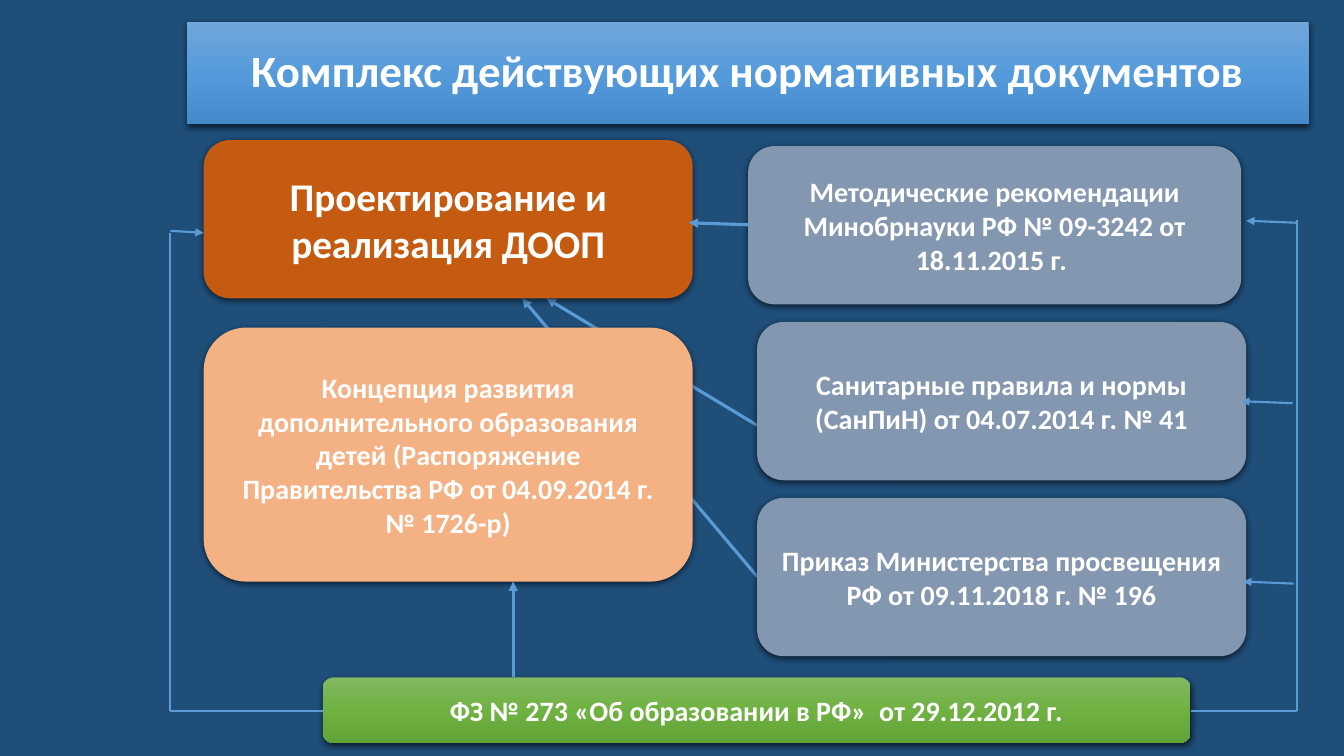
from collections import namedtuple

from lxml import etree
from pptx import Presentation
from pptx.dml.color import RGBColor
from pptx.enum.shapes import MSO_CONNECTOR, MSO_SHAPE
from pptx.enum.text import MSO_ANCHOR, MSO_AUTO_SIZE, PP_ALIGN
from pptx.oxml.ns import qn
from pptx.util import Inches, Pt

NAVY = RGBColor(0x1F, 0x4E, 0x79)
WHITE = RGBColor(0xFF, 0xFF, 0xFF)
BLACK = RGBColor(0x00, 0x00, 0x00)
LINE_BLUE = RGBColor(0x5B, 0x9B, 0xD5)
RUST = RGBColor(0xC5, 0x5A, 0x11)
PEACH = RGBColor(0xF4, 0xB1, 0x83)
SLATE = RGBColor(0x84, 0x97, 0xB0)
BLUE_GRADIENT = [RGBColor(0x71, 0xA6, 0xDB), RGBColor(0x55, 0x9B, 0xDB),
                 RGBColor(0x44, 0x8A, 0xCA)]
GREEN_GRADIENT = [RGBColor(0x81, 0xB8, 0x61), RGBColor(0x6F, 0xB2, 0x42),
                  RGBColor(0x62, 0xA3, 0x36)]

Box = namedtuple("Box", "left top width height")
TITLE_BOX = Box(1.85, 0.22, 11.13, 1.01)
LEFT_BOX = Box(2.02, 1.39, 4.85, 4.38)
RIGHT_BOX = Box(7.51, 1.45, 4.85, 5.06)
LAW_BOX = Box(3.2, 6.72, 8.61, 0.65)
CARD_HEIGHT = 1.57
CONCEPT_HEIGHT = 2.52
THICK, THIN = 2.25, 1.5

RIGHT_DOCUMENTS = [
    "Методические рекомендации Минобрнауки РФ № 09-3242 от 18.11.2015 г. ",
    "Санитарные правила и нормы (СанПиН) от 04.07.2014 г. № 41",
    "Приказ Министерства просвещения РФ от 09.11.2018 г. № 196",
]


def add_color_xml(parent, color):
    return etree.SubElement(parent, qn("a:srgbClr"), val=str(color))


def set_fill(shape, fill):
    """Apply one colour, or a list of colours as a downward gradient."""
    if isinstance(fill, RGBColor):
        shape.fill.solid()
        shape.fill.fore_color.rgb = fill
        return
    shape.fill.gradient()
    shape.fill.gradient_angle = 270
    stops = next(shape.element.spPr.iter(qn("a:gsLst")))
    for stop in list(stops):
        stops.remove(stop)
    for index, color in enumerate(fill):
        position = 100000 * index // (len(fill) - 1)
        add_color_xml(etree.SubElement(stops, qn("a:gs"), pos=str(position)), color)


def set_shadow(shape):
    shape.shadow.inherit = False
    effects = shape.element.spPr.find(qn("a:effectLst"))
    shadow = etree.SubElement(effects, qn("a:outerShdw"), blurRad=str(Pt(4.5)),
                              dist=str(Pt(1.5)), dir="5400000",
                              algn="ctr", rotWithShape="0")
    etree.SubElement(add_color_xml(shadow, BLACK), qn("a:alpha"), val="63000")


def format_panel(shape, text, fill, size):
    set_fill(shape, fill)
    shape.line.fill.background()
    set_shadow(shape)
    frame = shape.text_frame
    frame.text = text
    frame_format = {"word_wrap": True, "auto_size": MSO_AUTO_SIZE.NONE,
                    "vertical_anchor": MSO_ANCHOR.MIDDLE}
    for name, value in frame_format.items():
        setattr(frame, name, value)
    paragraph = frame.paragraphs[0]
    paragraph.alignment = PP_ALIGN.CENTER
    font = paragraph.runs[0].font
    for name, value in {"name": "Calibri", "size": Pt(size), "bold": True}.items():
        setattr(font, name, value)
    font.color.rgb = WHITE


def add_card(slide, box, text, fill, size=20):
    card = slide.shapes.add_shape(MSO_SHAPE.ROUNDED_RECTANGLE, *map(Inches, box))
    format_panel(card, text, fill, size)


def add_line(slide, start, end, width, arrow=False):
    line = slide.shapes.add_connector(MSO_CONNECTOR.STRAIGHT,
                                      *map(Inches, (*start, *end)))
    line.line.color.rgb = LINE_BLUE
    line.line.width = Pt(width)
    if arrow:
        etree.SubElement(line.line._get_or_add_ln(), qn("a:tailEnd"), type="triangle")
    etree.SubElement(line.element.spPr, qn("a:effectLst"))


def add_title(slide, box):
    title = slide.shapes.title
    for name, value in box._asdict().items():
        setattr(title, name, Inches(value))
    format_panel(title, "Комплекс действующих нормативных документов",
                 BLUE_GRADIENT, 32)
    title.text_frame.paragraphs[0].line_spacing = 0.9


def add_diagonal_arrows(slide, left_box, right_box):
    """Arrows from the lower right cards, passing behind the concept card."""
    target_y = left_box.top + CARD_HEIGHT
    for source_offset, target_offset in ((2.77, 3.4), (4.27, 3.16)):
        add_line(slide, (right_box.left, right_box.top + source_offset),
                 (left_box.left + target_offset, target_y), THICK, arrow=True)


def add_left_column(slide, box):
    add_card(slide, box._replace(height=CARD_HEIGHT),
             "Проектирование и реализация ДООП", RUST, 28)
    concept_top = box.top + box.height - CONCEPT_HEIGHT
    add_card(slide, box._replace(top=concept_top, height=CONCEPT_HEIGHT),
             "Концепция развития дополнительного образования детей "
             "(Распоряжение Правительства РФ от 04.09.2014 г. № 1726-р)", PEACH)


def add_right_column(slide, box):
    step = (box.height - CARD_HEIGHT) / (len(RIGHT_DOCUMENTS) - 1)
    for index, text in enumerate(RIGHT_DOCUMENTS):
        card = box._replace(top=box.top + index * step, height=CARD_HEIGHT)
        if index == 0:  # the first card sits slightly further left
            card = card._replace(left=box.left - 0.09, width=box.width + 0.04)
        add_card(slide, card, text, SLATE)


def add_law_bar(slide, box):
    add_card(slide, box, "ФЗ № 273 «Об образовании в РФ»  от 29.12.2012 г.",
             GREEN_GRADIENT)


def add_direct_arrows(slide, left_box, right_box, law_box):
    law_x = law_box.left + 1.89
    add_line(slide, (law_x, law_box.top),
             (law_x, left_box.top + left_box.height), THICK, arrow=True)
    add_line(slide, (right_box.left - 0.09, right_box.top + 0.78),
             (left_box.left + left_box.width - 0.04, right_box.top + 0.76),
             THICK, arrow=True)


def add_side_branch(slide, law_edge, trunk_x, trunk_top, arrows):
    """Line from the law bar to a vertical trunk with arrows to the cards."""
    base_y = LAW_BOX.top + 0.33
    add_line(slide, (law_edge, base_y), (trunk_x, base_y), THIN)
    add_line(slide, (trunk_x, trunk_top), (trunk_x, base_y), THIN)
    for start, end in arrows:
        add_line(slide, start, end, THIN, arrow=True)


def main():
    presentation = Presentation()
    presentation.slide_width = Inches(13.33)
    presentation.slide_height = Inches(7.5)
    slide = presentation.slides.add_slide(presentation.slide_layouts[5])
    slide.background.fill.solid()
    slide.background.fill.fore_color.rgb = NAVY

    # Title and document cards
    add_title(slide, TITLE_BOX)
    add_diagonal_arrows(slide, LEFT_BOX, RIGHT_BOX)
    add_left_column(slide, LEFT_BOX)
    add_right_column(slide, RIGHT_BOX)
    add_law_bar(slide, LAW_BOX)

    # Links between the cards and the law
    add_direct_arrows(slide, LEFT_BOX, RIGHT_BOX, LAW_BOX)
    add_side_branch(slide, LAW_BOX.left, 1.69, 2.31,
                    [((1.69, 2.29), (LEFT_BOX.left, 2.31))])
    add_side_branch(slide, LAW_BOX.left + LAW_BOX.width, 12.86, 2.18,
                    [((12.86, 2.21), (12.36, 2.19)),
                     ((12.82, 4), (12.31, 3.98)),
                     ((12.83, 5.79), (12.33, 5.77))])

    presentation.save("out.pptx")


if __name__ == "__main__":
    main()
